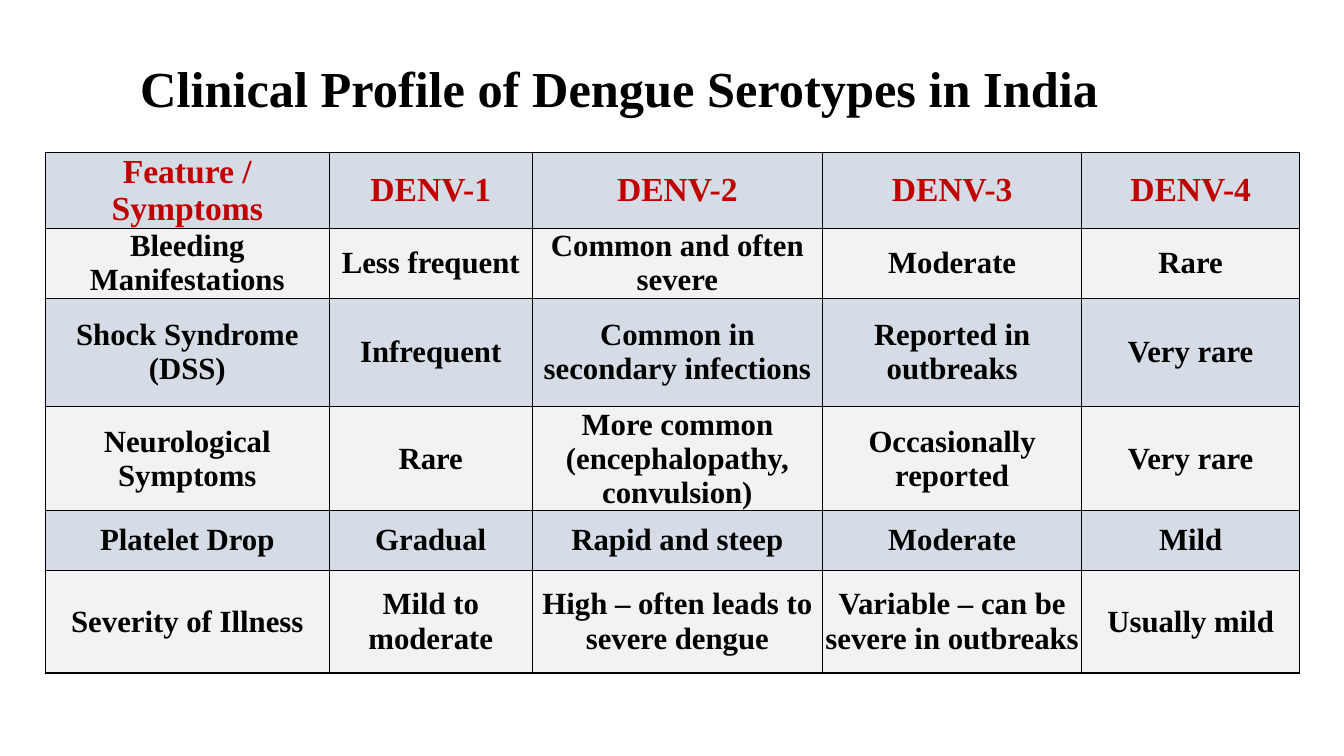
from dataclasses import dataclass

from lxml import etree
from pptx import Presentation
from pptx.dml.color import RGBColor
from pptx.enum import text
from pptx.oxml.ns import qn
from pptx.util import Cm, Pt

COLORS = {"black": "000000", "red": "C00000", "blue_gray": "D6DCE5", "light_gray": "F2F2F2"}
FONT = "Times New Roman"
COLUMN_WIDTHS = (7.16, 5.11, 7.32, 6.53, 5.49)


@dataclass(frozen=True)
class Row:
    height: float
    texts: tuple[str, ...]
    size: int = 22
    color: str = "black"


ROWS = (
    Row(1.75, ("Feature / Symptoms", "DENV-1", "DENV-2", "DENV-3", "DENV-4"), 24, "red"),
    Row(1.75, ("Bleeding Manifestations", "Less frequent", "Common and often severe",
               "Moderate", "Rare")),
    Row(2.74, ("Shock Syndrome (DSS)", "Infrequent", "Common in secondary infections",
               "Reported in outbreaks", "Very rare")),
    Row(2.59, ("Neurological Symptoms", "Rare", "More common (encephalopathy, convulsion)",
               "Occasionally reported", "Very rare")),
    Row(1.5, ("Platelet Drop", "Gradual", "Rapid and steep", "Moderate", "Mild")),
    Row(2.59, ("Severity of Illness", "Mild to moderate", "High – often leads to severe dengue",
               "Variable – can be severe in outbreaks", "Usually mild")),
)


def set_attributes(target, values: dict) -> None:
    for name, value in values.items():
        setattr(target, name, value)


def write_text(tf, content: str, size: int, color: str, align) -> None:
    p = tf.paragraphs[0]
    p.alignment = align
    r = p.add_run()
    r.text = content
    set_attributes(r.font, {"name": FONT, "size": Pt(size), "bold": True})
    r.font.color.rgb = RGBColor.from_string(COLORS[color])


def add_borders(cell) -> None:
    """Draw a thin black line on all four sides; call before filling the cell."""
    tc_pr = cell._tc.get_or_add_tcPr()
    for side in ("lnL", "lnR", "lnT", "lnB"):
        line = etree.SubElement(tc_pr, qn(f"a:{side}"), w=str(Pt(1)))
        fill = etree.SubElement(line, qn("a:solidFill"))
        etree.SubElement(fill, qn("a:srgbClr"), val=COLORS["black"])


def add_title(s) -> None:
    sp = s.shapes.title
    set_attributes(sp, {"left": Cm(3.28), "top": Cm(1.27), "width": Cm(26.47), "height": Cm(2.08)})
    tf = sp.text_frame
    set_attributes(tf, {"word_wrap": True, "vertical_anchor": text.MSO_ANCHOR.MIDDLE})
    write_text(tf, "Clinical Profile of Dengue Serotypes in India", 36, "black", text.PP_ALIGN.LEFT)
    tf.paragraphs[0].line_spacing = 0.9


def add_serotype_table(s) -> None:
    table = s.shapes.add_table(
        len(ROWS), len(COLUMN_WIDTHS), Cm(1.14), Cm(3.84),
        Cm(sum(COLUMN_WIDTHS)), Cm(sum(row.height for row in ROWS)),
    ).table
    set_attributes(table, {"first_row": False, "horz_banding": False})
    for column, width in zip(table.columns, COLUMN_WIDTHS):
        column.width = Cm(width)
    margins = dict.fromkeys(("margin_left", "margin_right", "margin_top", "margin_bottom"), Cm(0.02))
    for i, row in enumerate(ROWS):
        table.rows[i].height = Cm(row.height)
        band = "light_gray" if i % 2 else "blue_gray"
        for cell, content in zip(table.rows[i].cells, row.texts):
            set_attributes(cell, {**margins, "vertical_anchor": text.MSO_ANCHOR.MIDDLE})
            add_borders(cell)
            cell.fill.solid()
            cell.fill.fore_color.rgb = RGBColor.from_string(COLORS[band])
            write_text(cell.text_frame, content, row.size, row.color, text.PP_ALIGN.CENTER)


def main() -> None:
    prs = Presentation()
    set_attributes(prs, {"slide_width": Cm(33.87), "slide_height": Cm(19.05)})
    s = prs.slides.add_slide(prs.slide_layouts.get_by_name("Title Only"))
    add_title(s)
    add_serotype_table(s)
    prs.save("out.pptx")


if __name__ == "__main__":
    main()
